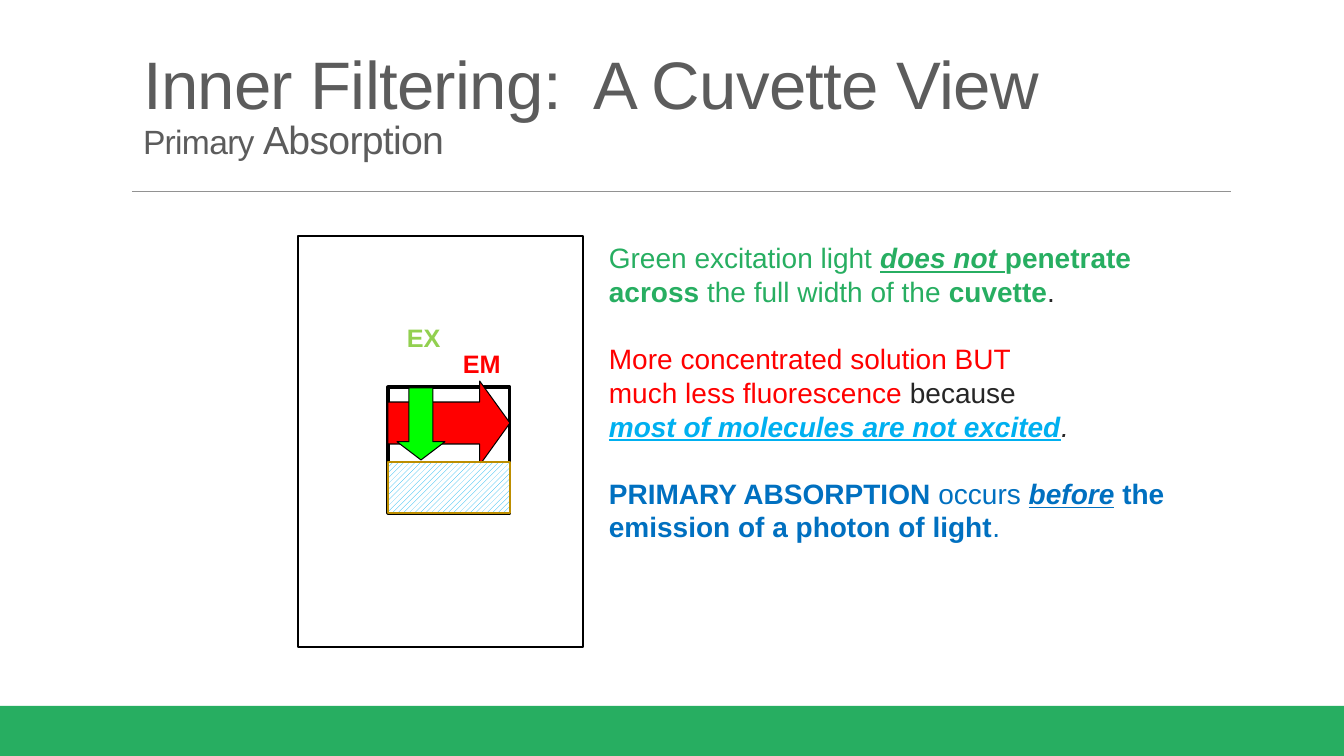
from dataclasses import dataclass

from lxml import etree
from pptx import Presentation
from pptx import util as u
from pptx.dml.color import RGBColor
from pptx.enum import dml, shapes, text
from pptx.oxml.ns import qn

PX_PER_INCH = 100.8


@dataclass(frozen=True)
class Theme:
    font: str = "Arial"
    title_size: int = 48
    subtitle_size: int = 28
    subtitle_small_size: int = 24
    body_size: int = 20
    label_size: int = 18
    line_pitch: int = 24
    title: str = "5C5C5C"
    rule: str = "929292"
    green: str = "27AE61"
    dark: str = "262626"
    red: str = "FF0000"
    cyan: str = "00B0F0"
    blue: str = "0070C0"
    excitation_label: str = "92D050"
    excitation: str = "00FF00"
    gold: str = "BD8E00"
    black: str = "000000"
    white: str = "FFFFFF"


THEME = Theme()

# Each run is (text, colour, style); style letters: b bold, i italic, u underline.
EXPLANATION = [
    [
        [("Green excitation light ", THEME.green, ""),
         ("does not ", THEME.green, "biu"),
         ("penetrate", THEME.green, "b")],
        [("across ", THEME.green, "b"),
         ("the full width of the ", THEME.green, ""),
         ("cuvette", THEME.green, "b"),
         (".", THEME.dark, "")],
    ],
    [
        [("More concentrated solution BUT", THEME.red, "")],
        [("much less fluorescence ", THEME.red, ""),
         ("because", THEME.dark, "")],
        [("most of molecules are not excited", THEME.cyan, "biu"),
         (".", THEME.dark, "i")],
    ],
    [
        [("PRIMARY ABSORPTION ", THEME.blue, "b"),
         ("occurs ", THEME.blue, ""),
         ("before", THEME.blue, "biu"),
         (" the", THEME.blue, "b")],
        [("emission of a photon of light", THEME.blue, "b"),
         (".", THEME.blue, "")],
    ],
]


def px(*lengths):
    return [u.Emu(round(length * u.Inches(1) / PX_PER_INCH)) for length in lengths]


def rgb(colour):
    return RGBColor.from_string(colour)


def add_run(paragraph, content, size, colour, style=""):
    run = paragraph.add_run()
    run.text = content
    font = run.font
    font.name, font.size = THEME.font, u.Pt(size)
    font.color.rgb = rgb(colour)
    font.bold, font.italic, font.underline = (letter in style for letter in "biu")
    return run


def add_shape(slide, kind, box, fill=None, line=None, width=0.75):
    shape = slide.shapes.add_shape(kind, *px(*box))
    shape.shadow.inherit = False
    if fill:
        shape.fill.solid()
        shape.fill.fore_color.rgb = rgb(fill)
    else:
        shape.fill.background()
    if line:
        shape.line.color.rgb = rgb(line)
        shape.line.width = u.Pt(width)
    else:
        shape.line.fill.background()
    return shape


def add_arrow(slide, kind, box, fill, head):
    """Draw a block arrow; head is the head length relative to the arrow's breadth."""
    arrow = add_shape(slide, kind, box, fill, THEME.black)
    arrow.adjustments[0] = 0.5
    arrow.adjustments[1] = head


def add_rule(slide, left, right, y):
    rule = slide.shapes.add_connector(
        shapes.MSO_CONNECTOR.STRAIGHT, *px(left, y, right, y))
    rule.line.color.rgb = rgb(THEME.rule)
    rule.line.width = u.Pt(0.5)
    etree.SubElement(rule._element.spPr, qn("a:effectLst"))


def add_title(slide):
    title = slide.shapes.title
    title.left, title.top, title.width, title.height = px(133, 44, 1020, 124)
    title.text_frame.vertical_anchor = text.MSO_ANCHOR.BOTTOM
    paragraph = title.text_frame.paragraphs[0]
    paragraph.alignment = text.PP_ALIGN.LEFT
    paragraph.line_spacing = 0.85
    add_run(paragraph, "Inner Filtering:  A Cuvette View", THEME.title_size, THEME.title)
    paragraph.add_line_break()
    add_run(paragraph, "Primary ", THEME.subtitle_small_size, THEME.title)
    add_run(paragraph, "Absorption", THEME.subtitle_size, THEME.title)
    for run in paragraph.runs:
        run.font._element.set("spc", "-50")


def add_explanation(slide, box):
    frame = slide.shapes.add_textbox(*px(*box)).text_frame
    frame.word_wrap = True
    paragraph = None
    for block_number, block in enumerate(EXPLANATION):
        for line_number, line in enumerate(block):
            paragraph = frame.add_paragraph() if paragraph else frame.paragraphs[0]
            paragraph.line_spacing = u.Pt(THEME.line_pitch)
            if block_number and not line_number:
                paragraph.space_before = u.Pt(THEME.line_pitch)
            for content, colour, style in line:
                add_run(paragraph, content, THEME.body_size, colour, style)


def add_label(slide, content, left, top, colour):
    frame = slide.shapes.add_textbox(*px(left, top, 76, 40)).text_frame
    frame.word_wrap = True
    add_run(frame.paragraphs[0], content, THEME.label_size, colour, "b")


def add_solution(slide, box):
    solution = add_shape(
        slide, shapes.MSO_SHAPE.RECTANGLE, box, line=THEME.gold, width=1.25)
    solution.fill.patterned()
    solution.fill.pattern = dml.MSO_PATTERN.WIDE_UPWARD_DIAGONAL
    solution.fill.fore_color.rgb = rgb(THEME.cyan)
    solution.fill.back_color.rgb = rgb(THEME.white)


def main():
    presentation = Presentation()
    presentation.slide_width, presentation.slide_height = px(1344, 756)
    slide = presentation.slides.add_slide(presentation.slide_layouts[5])
    kind = shapes.MSO_SHAPE

    add_shape(slide, kind.RECTANGLE, (0, 706, 1344, 50), THEME.green)
    add_rule(slide, 132, 1231, 191)
    add_title(slide)
    add_shape(slide, kind.RECTANGLE, (388, 387, 122, 126),
              THEME.white, THEME.black, 2.25)
    add_arrow(slide, kind.RIGHT_ARROW, (388, 381, 122, 84), THEME.red, 0.36)
    add_arrow(slide, kind.DOWN_ARROW, (397, 388, 48, 72), THEME.excitation, 0.38)
    add_shape(slide, kind.RECTANGLE, (298, 236, 285, 411), line=THEME.black, width=2)
    add_explanation(slide, (599, 236, 629, 411))
    add_label(slide, "EX", 397, 317, THEME.excitation_label)
    add_label(slide, "EM", 453, 343, THEME.red)
    add_solution(slide, (388, 462, 122, 51))

    presentation.save("out.pptx")


if __name__ == "__main__":
    main()
